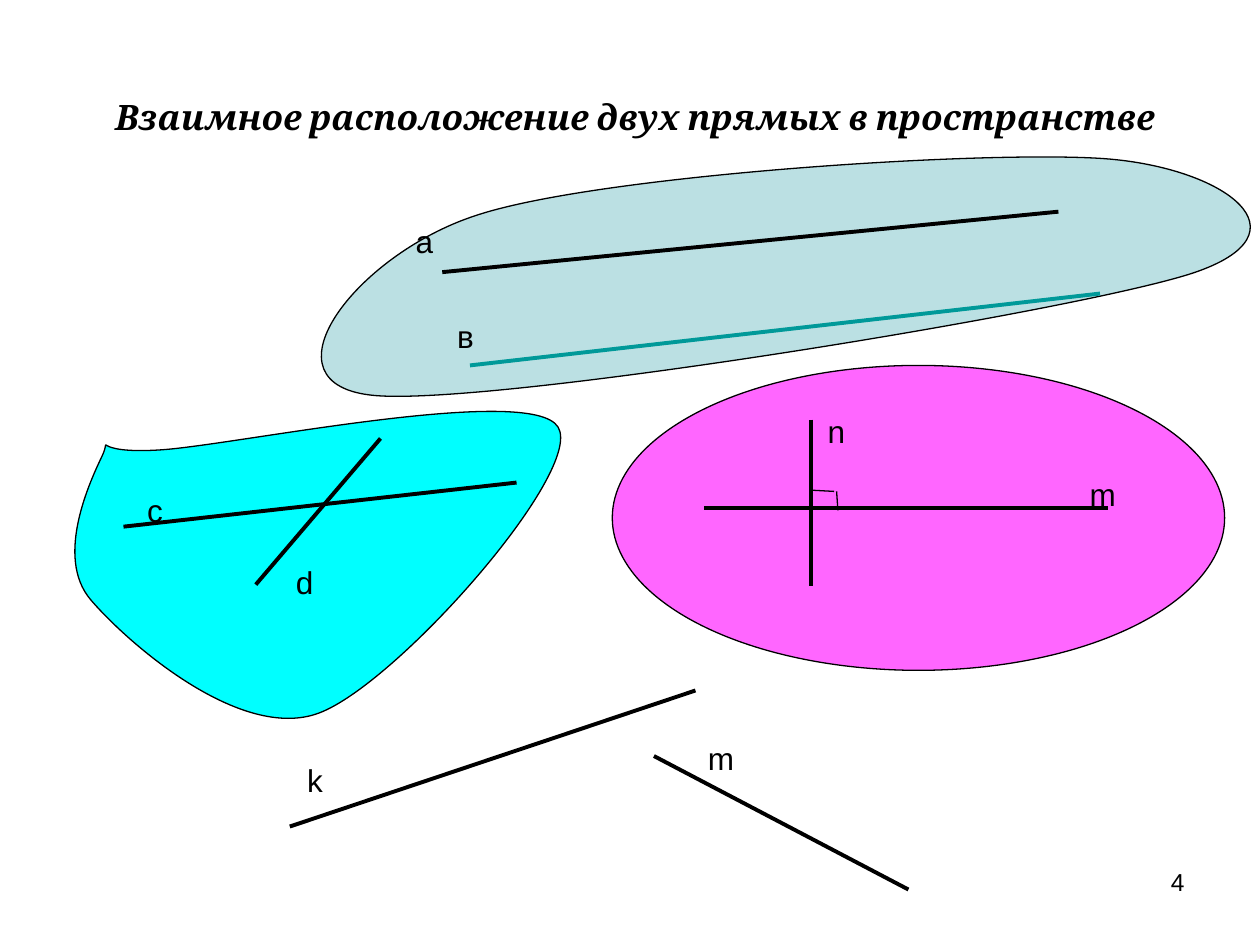
import pptx
import pptx.util
import pptx.dml.color
import pptx.enum.shapes
import pptx.enum.text
import pptx.oxml
import pptx.oxml.ns

Inches, Pt = pptx.util.Inches, pptx.util.Pt
Align = pptx.enum.text.PP_ALIGN
qn = pptx.oxml.ns.qn

HUES = {"ink": "000000", "teal": "009999", "pink": "FF66FF",
        "cyan": "00FFFF", "pale": "BBE0E3"}

TITLE = "Взаимное расположение двух прямых в пространстве"
NUMBER = "4"
OVAL = (4.86, 2.9, 4.86, 2.42)
PLANES = [
    ("cyan", [(1.28, 3.57),
              (1.88, 3.53), (4.22, 3.04), (4.43, 3.39),
              (4.64, 3.74), (3.15, 5.43), (2.53, 5.66),
              (1.91, 5.89), (1.01, 5.1), (0.72, 4.76),
              (0.43, 4.42), (0.72, 3.81), (0.81, 3.62),
              (0.9, 3.43), (0.68, 3.61), (1.28, 3.57)]),
    ("pale", [(3.78, 1.71),
              (2.82, 2.02), (2.03, 3.06), (2.98, 3.14),
              (3.93, 3.22), (8.5, 2.48), (9.46, 2.17),
              (10.43, 1.85), (9.72, 1.33), (8.77, 1.26),
              (7.81, 1.19), (4.74, 1.39), (3.78, 1.71)]),
]
LINES = [
    (3.51, 2.16, 8.4, 1.68, "ink", 2.25),
    (3.73, 2.9, 8.73, 2.33, "teal", 2.25),
    (0.98, 4.18, 4.1, 3.83, "ink", 2.25),
    (3.02, 3.48, 2.03, 4.64, "ink", 2.25),
    (6.44, 3.33, 6.44, 4.65, "ink", 2.25),
    (5.59, 4.03, 8.79, 4.03, "ink", 2.25),
    (2.3, 6.56, 5.52, 5.48, "ink", 2.25),
    (5.19, 6, 7.21, 7.06, "ink", 2.25),
    (6.43, 3.89, 6.62, 3.9, "ink", 0.75),
    (6.64, 3.9, 6.65, 4.05, "ink", 0.75),
]
LABELS = [
    ("а", 3.2, 1.71, 0.34), ("в", 3.53, 2.47, 0.34),
    ("с", 1.07, 3.85, 0.33), ("d", 2.25, 4.42, 0.34),
    ("m", 8.55, 3.72, 0.41), ("n", 6.47, 3.22, 0.34),
    ("k", 2.34, 5.99, 0.33), ("m", 5.52, 5.82, 0.41),
]


def hue(name):
    return pptx.dml.color.RGBColor.from_string(HUES[name])


def write(frame, text, size, face="Arial", align=Align.LEFT):
    frame.text = text
    para = frame.paragraphs[0]
    para.alignment = align
    font = para.runs[0].font
    font.size, font.name = Pt(size), face
    font.color.rgb = hue("ink")
    return font


def paint(shape, fill):
    shape.shadow.inherit = False
    shape.fill.solid()
    shape.fill.fore_color.rgb = hue(fill)
    shape.line.color.rgb = hue("ink")
    shape.line.width = Pt(0.75)


def add_plane(shapes, fill, points):
    spots = [(Inches(x), Inches(y)) for x, y in points]
    pen = shapes.build_freeform(*spots[0])
    pen.add_line_segments(spots[1:], close=True)
    shape = pen.convert_to_shape()
    paint(shape, fill)
    trace = next(shape._element.iter(qn("a:path")))
    steps = trace.findall(qn("a:lnTo"))
    for i in range(0, len(steps), 3):
        curve = pptx.oxml.parse_xml(
            f'<a:cubicBezTo {pptx.oxml.ns.nsdecls("a")}/>')
        steps[i].addprevious(curve)
        for step in steps[i:i + 3]:
            curve.append(step[0])
            trace.remove(step)


def add_line(shapes, x1, y1, x2, y2, color, width):
    line = shapes.add_connector(pptx.enum.shapes.MSO_CONNECTOR.STRAIGHT,
                                *map(Inches, (x1, y1, x2, y2)))
    line.line.color.rgb = hue(color)
    line.line.width = Pt(width)
    line._element.spPr.append(pptx.oxml.parse_xml(
        f'<a:effectLst {pptx.oxml.ns.nsdecls("a")}/>'))


def main():
    deck = pptx.Presentation()
    deck.slide_width, deck.slide_height = Inches(10), Inches(7.5)
    slide = deck.slides.add_slide(deck.slide_layouts[5])
    shapes = slide.shapes

    title = shapes.title
    title.left, title.top = Inches(0.67), Inches(0.3)
    title.width, title.height = Inches(8.74), Inches(1.25)
    title.text_frame.vertical_anchor = pptx.enum.text.MSO_ANCHOR.MIDDLE
    font = write(title.text_frame, TITLE, 20, "Cambria", Align.CENTER)
    font.bold = font.italic = True

    oval = shapes.add_shape(pptx.enum.shapes.MSO_SHAPE.OVAL,
                            *map(Inches, OVAL))
    paint(oval, "pink")
    for fill, points in PLANES:
        add_plane(shapes, fill, points)
    for item in LINES:
        add_line(shapes, *item)

    for text, x, y, width in LABELS:
        box = shapes.add_textbox(*map(Inches, (x, y, width, 0.4)))
        box.text_frame.word_wrap = False
        box.text_frame.auto_size = pptx.enum.text.MSO_AUTO_SIZE.SHAPE_TO_FIT_TEXT
        write(box.text_frame, text, 18)

    page = shapes.add_textbox(*map(Inches, (7.17, 6.83, 2.33, 0.52)))
    page.text_frame.word_wrap = True
    write(page.text_frame, NUMBER, 14, align=Align.RIGHT)

    deck.save("out.pptx")


if __name__ == "__main__":
    main()
